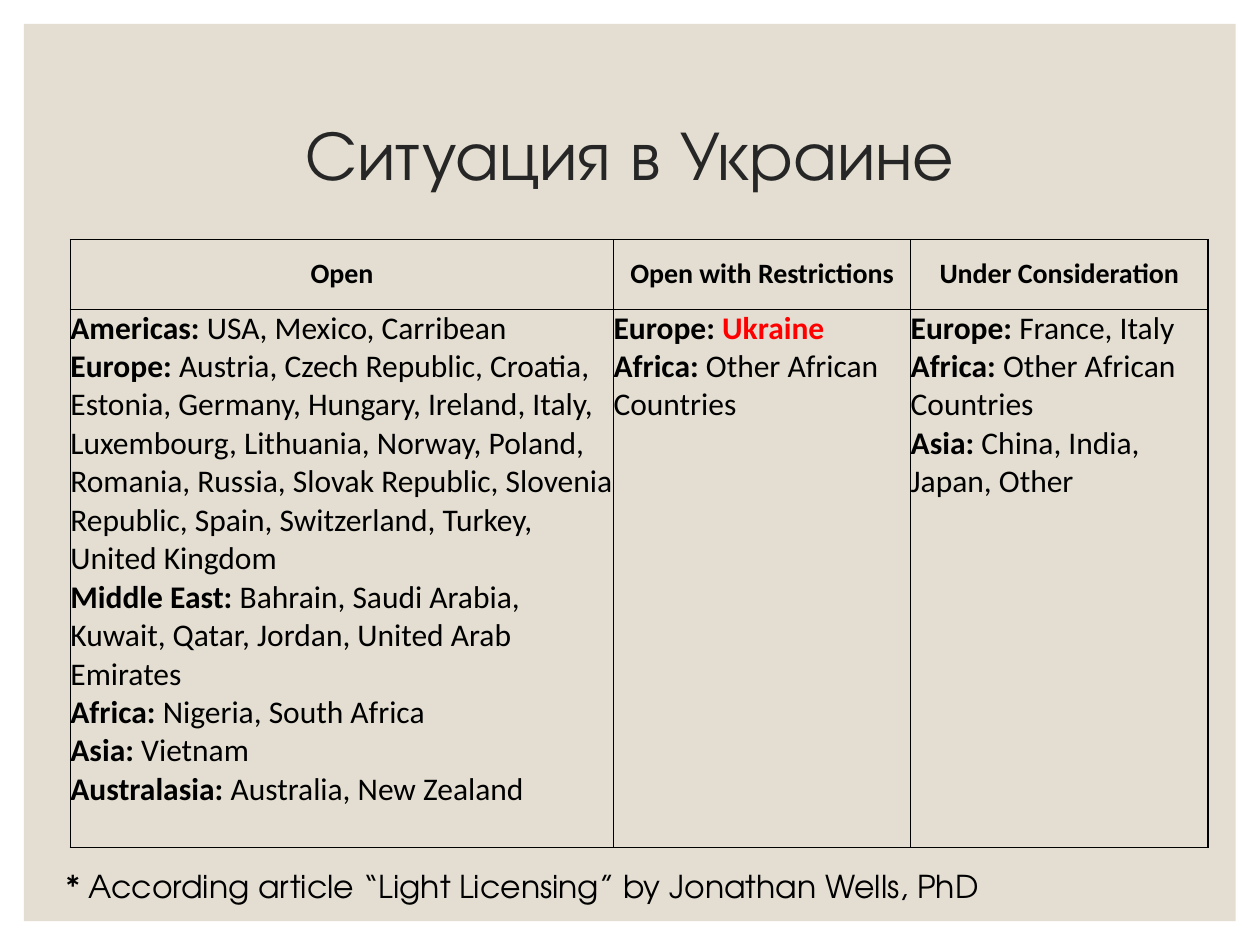
from lxml.etree import SubElement
from pptx import Presentation
from pptx.dml.color import RGBColor
from pptx.enum.shapes import MSO_SHAPE
from pptx.enum.text import MSO_ANCHOR, MSO_AUTO_SIZE, PP_ALIGN
from pptx.oxml.ns import qn
from pptx.util import Cm, Pt

HUES = {"panel": "E3DED1", "title": "262626", "text": "000000", "alert": "FF0000"}
SANS, DISPLAY = "Calibri", "TeX Gyre Adventor"

TITLE = "Ситуация в Украине"
NOTE = "* According article “Light Licensing” by Jonathan Wells, PhD"
ALERT = "Ukraine"
# Heading, column width in cm, then (region, countries) pairs
COLUMNS = [
    ("Open", 10.95, [
        ("Americas:", "USA, Mexico, Carribean"),
        ("Europe:", "Austria, Czech Republic, Croatia, Estonia, Germany, "
                    "Hungary, Ireland, Italy, Luxembourg, Lithuania, Norway, "
                    "Poland, Romania, Russia, Slovak Republic, Slovenia "
                    "Republic, Spain, Switzerland, Turkey, United Kingdom"),
        ("Middle East:", "Bahrain, Saudi Arabia, Kuwait, Qatar, Jordan, "
                         "United Arab Emirates"),
        ("Africa:", "Nigeria, South Africa"),
        ("Asia:", "Vietnam"),
        ("Australasia:", "Australia, New Zealand"),
    ]),
    ("Open with Restrictions", 5.99, [
        ("Europe:", ALERT),
        ("Africa:", "Other African Countries"),
    ]),
    ("Under Consideration", 5.99, [
        ("Europe:", "France, Italy"),
        ("Africa:", "Other African Countries"),
        ("Asia:", "China, India, Japan, Other"),
    ]),
]
ROWS = [1.4, 10.86]


def color(name):
    return RGBColor.from_string(HUES[name])


def style(para, face, size, hue="text", bold=False):
    font = para.font
    font.name, font.size, font.bold = face, Pt(size), bold
    font.color.rgb = color(hue)


def border(cell, row, col):
    """Draw 1 pt lines on the table's edge and 0.5 pt lines inside it."""
    props = cell._tc.get_or_add_tcPr()
    outer = {"L": col == 0, "R": col == len(COLUMNS) - 1,
             "T": row == 0, "B": row == len(ROWS) - 1}
    for spot, (side, edge) in enumerate(outer.items()):
        line = SubElement(props, qn(f"a:ln{side}"), w=str(Pt(1 if edge else 0.5)))
        fill = SubElement(line, qn("a:solidFill"))
        SubElement(fill, qn("a:srgbClr"), val=HUES["text"])
        props.insert(spot, line)


def fill_head(cell, text):
    cell.vertical_anchor = MSO_ANCHOR.MIDDLE
    para = cell.text_frame.paragraphs[0]
    para.text = text
    para.alignment = PP_ALIGN.CENTER
    style(para, SANS, 16, bold=True)


def fill_body(cell, groups):
    frame = cell.text_frame
    for i, (region, lands) in enumerate(groups):
        para = frame.add_paragraph() if i else frame.paragraphs[0]
        style(para, SANS, 18)
        head = para.add_run()
        head.text = region + " "
        head.font.bold = True
        run = para.add_run()
        run.text = lands
        if lands == ALERT:
            run.font.bold = True
            run.font.color.rgb = color("alert")


def add_grid(slide):
    widths = [width for _, width, _ in COLUMNS]
    grid = slide.shapes.add_table(
        len(ROWS), len(COLUMNS), Cm(1.42), Cm(4.83),
        Cm(sum(widths)), Cm(sum(ROWS))).table
    grid.horz_banding = False
    for row, height in zip(grid.rows, ROWS):
        row.height = Cm(height)
    for c, (head, width, groups) in enumerate(COLUMNS):
        grid.columns[c].width = Cm(width)
        for r in range(len(ROWS)):
            cell = grid.cell(r, c)
            cell.margin_left = cell.margin_right = 0
            cell.margin_top = cell.margin_bottom = 0
            cell.fill.background()
            border(cell, r, c)
        fill_head(grid.cell(0, c), head)
        fill_body(grid.cell(1, c), groups)


def add_panel(slide):
    panel = slide.shapes.add_shape(
        MSO_SHAPE.RECTANGLE, Cm(0.48), Cm(0.48), Cm(24.43), Cm(18.09))
    panel.shadow.inherit = False
    panel.fill.solid()
    panel.fill.fore_color.rgb = color("panel")
    panel.line.fill.background()
    slide.shapes._spTree.insert(2, panel._element)  # behind the title


def set_title(slide):
    title = slide.shapes.title
    title.left, title.top = Cm(2.03), Cm(1.78)
    title.width, title.height = Cm(21.34), Cm(2.79)
    frame = title.text_frame
    frame.text = TITLE
    frame.vertical_anchor = MSO_ANCHOR.MIDDLE
    para = frame.paragraphs[0]
    para.alignment, para.line_spacing = PP_ALIGN.CENTER, 0.9
    style(para, DISPLAY, 40, "title")


def add_note(slide):
    box = slide.shapes.add_textbox(Cm(1.09), Cm(17.35), Cm(19.15), Cm(1.02))
    frame = box.text_frame
    frame.word_wrap = False
    frame.auto_size = MSO_AUTO_SIZE.SHAPE_TO_FIT_TEXT
    frame.text = NOTE
    style(frame.paragraphs[0], DISPLAY, 18)


def main():
    deck = Presentation()
    deck.slide_width, deck.slide_height = Cm(25.4), Cm(19.05)
    slide = deck.slides.add_slide(deck.slide_layouts[5])
    add_panel(slide)
    set_title(slide)
    add_grid(slide)
    add_note(slide)
    deck.save("out.pptx")


if __name__ == "__main__":
    main()
